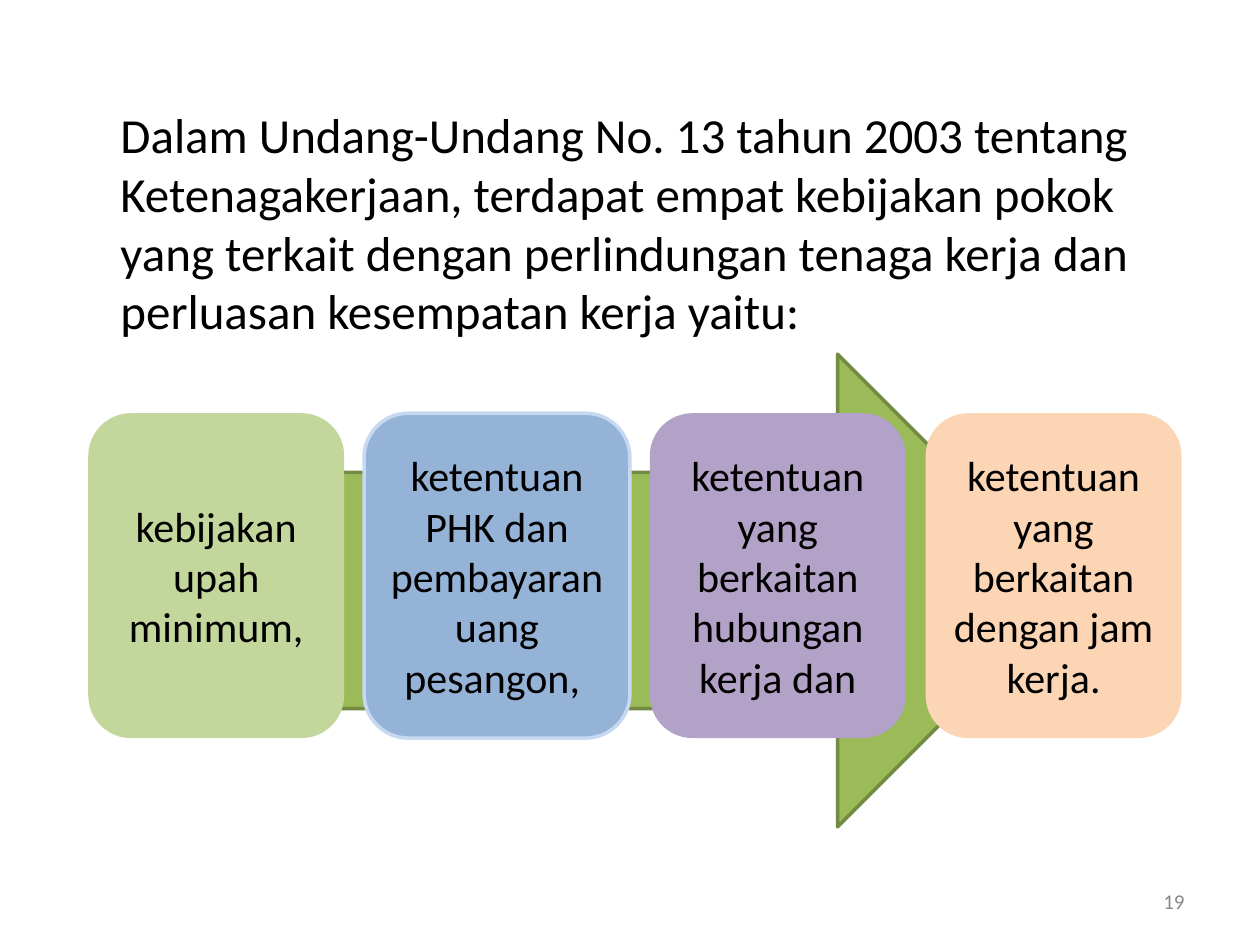
from pptx import Presentation
from pptx.dml.color import RGBColor
from pptx.enum.shapes import MSO_SHAPE
from pptx.enum.text import MSO_ANCHOR, MSO_AUTO_SIZE, PP_ALIGN
from pptx.util import Cm, Pt


def paint(shape, fill, line=None):
    shape.shadow.inherit = False
    shape.fill.solid()
    shape.fill.fore_color.rgb = RGBColor.from_string(fill)
    if line:
        shape.line.color.rgb = RGBColor.from_string(line)
        shape.line.width = Pt(2)
    else:
        shape.line.fill.background()


def write(shape, lines, size, color, alignment, anchor):
    frame = shape.text_frame
    frame.word_wrap = True
    frame.vertical_anchor = anchor
    for index, line in enumerate(lines):
        paragraph = frame.add_paragraph() if index else frame.paragraphs[0]
        paragraph.alignment = alignment
        run = paragraph.add_run()
        run.text = line
        run.font.name = "Calibri"
        run.font.size = Pt(size)
        run.font.color.rgb = RGBColor.from_string(color)


presentation = Presentation()
presentation.slide_width = Cm(25.4)
presentation.slide_height = Cm(19.05)
slide = presentation.slides.add_slide(presentation.slide_layouts[6])

introduction = slide.shapes.add_textbox(Cm(2.18), Cm(1.98), Cm(22.02), Cm(5.05))
write(introduction, [
    "Dalam Undang-Undang No. 13 tahun 2003 tentang",
    "Ketenagakerjaan, terdapat empat kebijakan pokok yang terkait dengan perlindungan tenaga kerja dan",
    "perluasan kesempatan kerja yaitu:",
], 28, "000000", PP_ALIGN.LEFT, MSO_ANCHOR.TOP)
introduction.text_frame.auto_size = MSO_AUTO_SIZE.SHAPE_TO_FIT_TEXT

arrow = slide.shapes.add_shape(
    MSO_SHAPE.RIGHT_ARROW, Cm(3.18), Cm(7.14), Cm(18.47), Cm(9.53))
paint(arrow, "9BBB59", "738A42")

policies = [
    (["kebijakan", "upah", "minimum,"], 5.16, "C3D69B", None),
    (["ketentuan", "PHK dan", "pembayaran uang", "pesangon, "], 5.36, "95B3D7", "C6D9F1"),
    (["ketentuan", "yang", "berkaitan", "hubungan", "kerja dan"], 5.16, "B3A2C7", None),
    (["ketentuan", "yang", "berkaitan", "dengan jam", "kerja."], 5.16, "FCD5B5", None),
]
gap = 0.4
left = 1.78
for lines, width, fill, outline in policies:
    card = slide.shapes.add_shape(
        MSO_SHAPE.ROUNDED_RECTANGLE, Cm(left), Cm(8.33), Cm(width), Cm(6.55))
    paint(card, fill, outline)
    write(card, lines, 24, "000000", PP_ALIGN.CENTER, MSO_ANCHOR.MIDDLE)
    left += width + gap

page_number = slide.shapes.add_textbox(Cm(18.2), Cm(17.65), Cm(5.93), Cm(1.02))
write(page_number, ["19"], 12, "898989", PP_ALIGN.RIGHT, MSO_ANCHOR.MIDDLE)

presentation.save("out.pptx")
